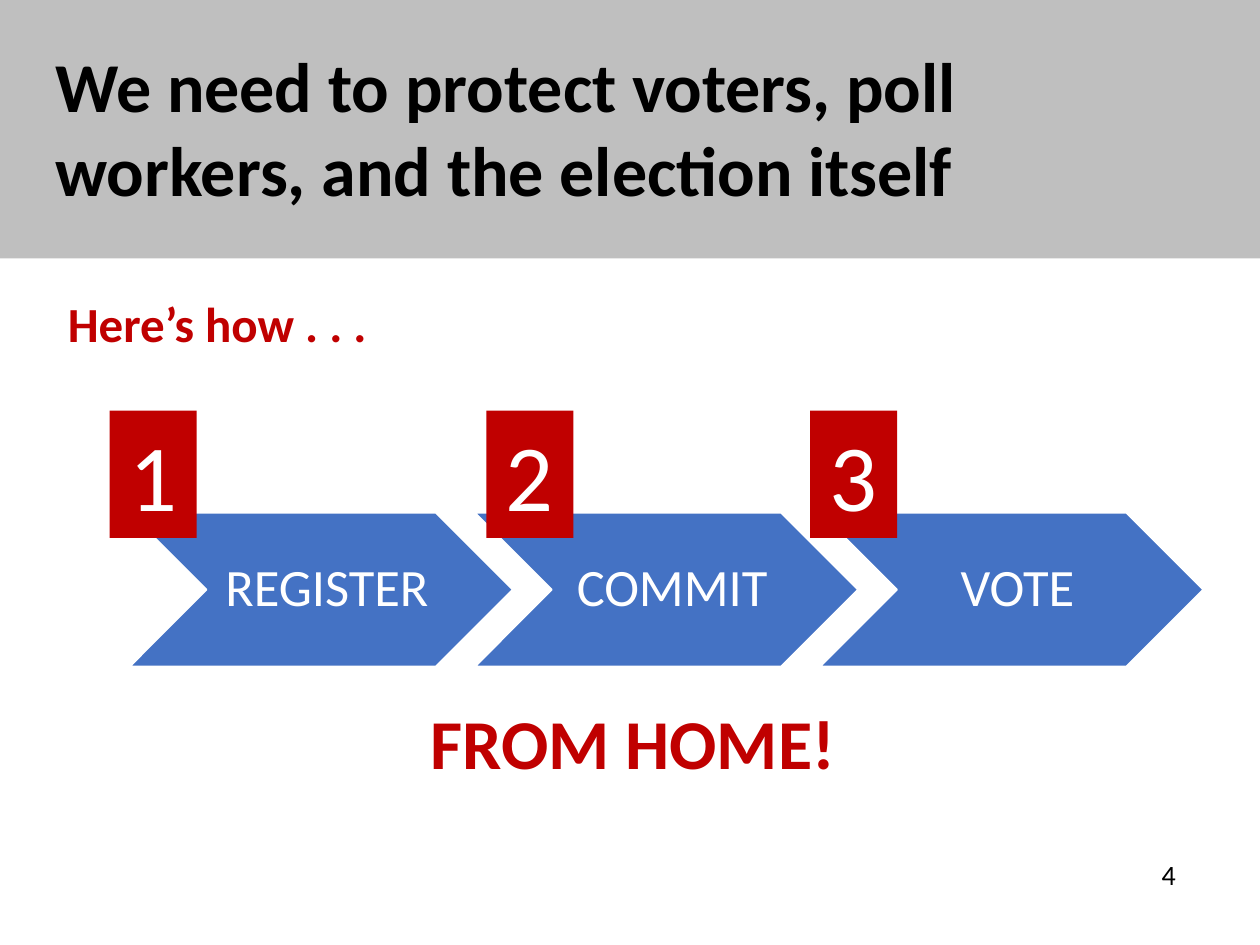
from pptx import Presentation
from pptx.dml.color import RGBColor
from pptx.enum.shapes import MSO_SHAPE
from pptx.enum.text import MSO_ANCHOR, PP_ALIGN
from pptx.util import Inches, Pt

GREY, BLUE, RED, WHITE, BLACK = "BFBFBF", "4472C4", "C00000", "FFFFFF", "000000"


def colour(value):
    return RGBColor.from_string(value)


class SlideBuilder:
    """Hold the text style and the current slide, and add elements to it."""

    font_name = "Calibri"

    def __init__(self, slide):
        self.slide = slide

    def fill_text(self, shape, text, size, text_colour, bold=False,
                  anchor=MSO_ANCHOR.TOP, margins=(0.1, 0.05, 0.1, 0.05),
                  **paragraph_format):
        frame = shape.text_frame
        left, top, right, bottom = map(Inches, margins)
        frame_format = {
            "word_wrap": True, "vertical_anchor": anchor,
            "margin_left": left, "margin_top": top,
            "margin_right": right, "margin_bottom": bottom,
        }
        paragraph = frame.paragraphs[0]
        paragraph.text = text
        font = paragraph.runs[0].font
        font_format = {"name": self.font_name, "size": Pt(size), "bold": bold}
        for target, values in ((frame, frame_format), (paragraph, paragraph_format),
                               (font, font_format)):
            for name, value in values.items():
                setattr(target, name, value)
        font.color.rgb = colour(text_colour)

    def text(self, box, text, size, text_colour, **options):
        shape = self.slide.shapes.add_textbox(*map(Inches, box))
        self.fill_text(shape, text, size, text_colour, **options)

    def shape(self, kind, box, fill, line=None):
        shape = self.slide.shapes.add_shape(kind, *map(Inches, box))
        shape.shadow.inherit = False
        shape.fill.solid()
        shape.fill.fore_color.rgb = colour(fill)
        if line:
            shape.line.color.rgb = colour(line)
            shape.line.width = Pt(1)
        else:
            shape.line.fill.background()
        return shape

    def step(self, left, label):
        top, width, height = 4.07, 3.04, 1.22
        self.shape(MSO_SHAPE.CHEVRON, (left, top, width, height), BLUE, WHITE)
        self.text((left + height / 2, top, width - height, height), label, 30, WHITE,
                  anchor=MSO_ANCHOR.MIDDLE, margins=(0.13, 0.04, 0.04, 0.04),
                  alignment=PP_ALIGN.CENTER, line_spacing=0.9)

    def badge(self, left, number):
        shape = self.shape(MSO_SHAPE.RECTANGLE, (left, 3.26, 0.69, 1.01), RED)
        self.fill_text(shape, str(number), 54, WHITE, alignment=PP_ALIGN.CENTER)


def main():
    presentation = Presentation()
    presentation.slide_width, presentation.slide_height = Inches(10), Inches(7.5)
    builder = SlideBuilder(presentation.slides.add_slide(presentation.slide_layouts[6]))

    builder.shape(MSO_SHAPE.RECTANGLE, (0, 0, 10, 2.05), GREY)
    builder.text((0.34, 0.28, 8.52, 1.45),
                 "We need to protect voters, poll workers, and the election itself",
                 40, BLACK, bold=True, anchor=MSO_ANCHOR.MIDDLE)

    for index, label in enumerate(("REGISTER", "COMMIT", "VOTE")):
        builder.step(1.03 + 2.74 * index, label)
    for number, left in enumerate((0.87, 3.86, 6.43), start=1):
        builder.badge(left, number)

    builder.text((7.41, 6.76, 2.02, 0.37), "4", 16, BLACK, alignment=PP_ALIGN.RIGHT)
    builder.text((0.44, 2.28, 3.44, 0.57), "Here’s how . . .", 28, RED, bold=True)
    builder.text((3.32, 5.5, 3.44, 0.77), "FROM HOME!", 40, RED, bold=True)

    presentation.save("out.pptx")


if __name__ == "__main__":
    main()
